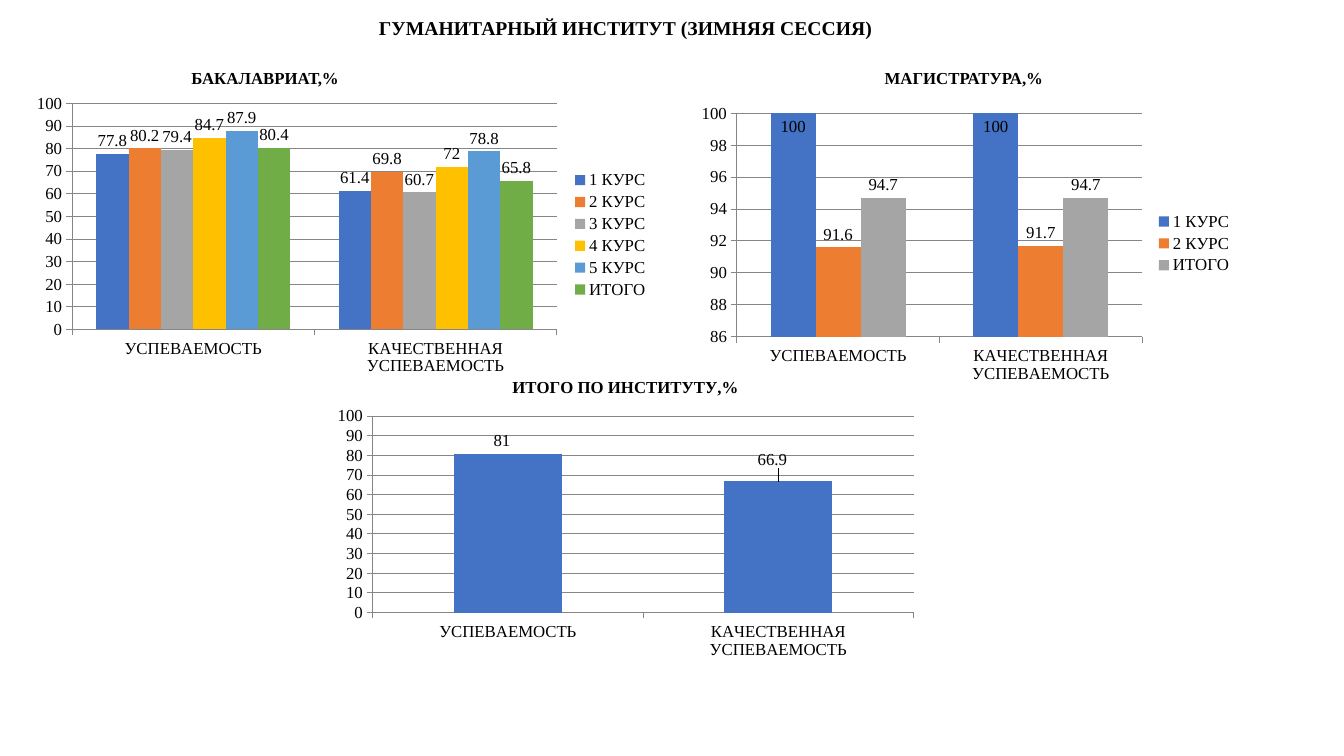
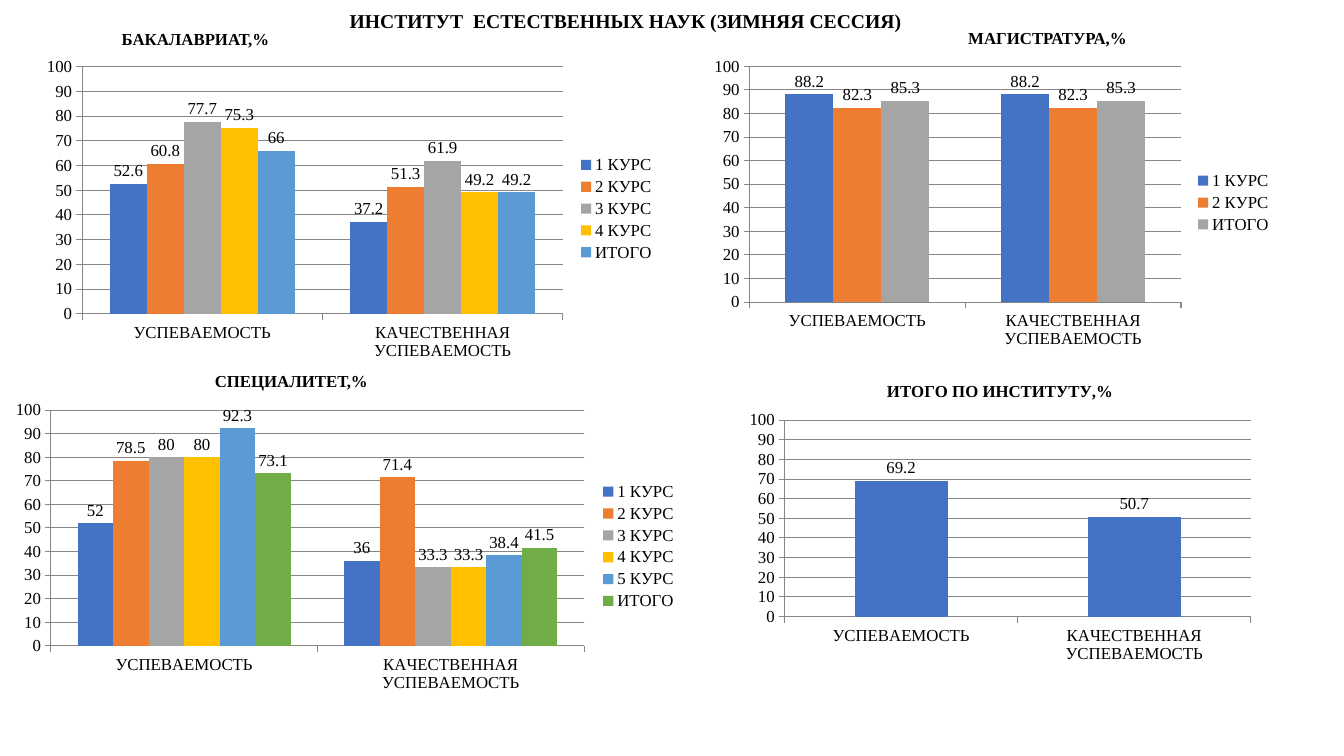
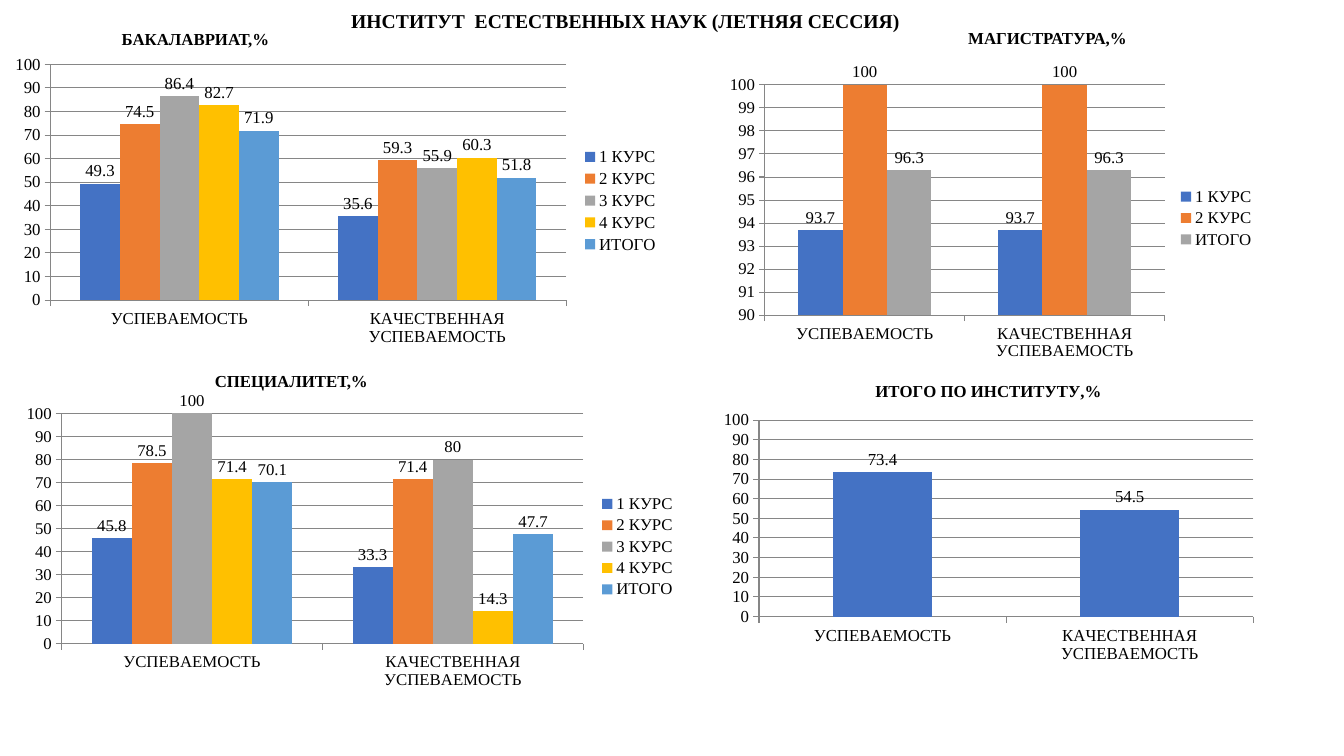
import pptx
import pptx.util
import pptx.chart.data
import pptx.dml.color
import pptx.enum.chart
import pptx.enum.text
import pptx.oxml
import pptx.oxml.ns

COLORS = {"text": "000000", "axis": "868686", "blue": "4472C4", "orange": "ED7D31",
          "grey": "A5A5A5", "yellow": "FFC000", "sky": "5B9BD5", "green": "70AD47"}
SERIES_COLORS = ["blue", "orange", "grey", "yellow", "sky", "green"]
FONT = "Times New Roman"
CATEGORIES = ["УСПЕВАЕМОСТЬ", "КАЧЕСТВЕННАЯ УСПЕВАЕМОСТЬ"]
BODY_FORMAT = {"name": FONT, "size": pptx.util.Pt(12), "bold": False}
HEADING_FORMAT = {**BODY_FORMAT, "bold": True}
TITLE_FORMAT = {**HEADING_FORMAT, "size": pptx.util.Pt(14)}
FRAME_FORMAT = {"word_wrap": True,
                "auto_size": pptx.enum.text.MSO_AUTO_SIZE.NONE,
                "vertical_anchor": pptx.enum.text.MSO_ANCHOR.TOP}
HEADING_SIZE = (2.84, 0.26)
LABEL_POSITION = pptx.enum.chart.XL_LABEL_POSITION


def rgb(name):
    return pptx.dml.color.RGBColor.from_string(COLORS[name])


def inches(box):
    return [pptx.util.Inches(length) for length in box]


def apply(target, values):
    for key, value in values.items():
        setattr(target, key, value)


def style_font(font, values):
    apply(font, values)
    font.color.rgb = rgb("text")


def fill_text(frame, text, values):
    apply(frame, FRAME_FORMAT)
    paragraph = frame.paragraphs[0]
    paragraph.text = text
    paragraph.alignment = pptx.enum.text.PP_ALIGN.CENTER
    style_font(paragraph.runs[0].font, values)


def add_title(slide, text, top):
    title = slide.shapes.title
    box = inches((2.52, top, 7.37, 0.4))
    apply(title, dict(zip(("left", "top", "width", "height"), box)))
    fill_text(title.text_frame, text, TITLE_FORMAT)


def add_heading(slide, text, left, top):
    heading = slide.shapes.add_textbox(*inches((left, top) + HEADING_SIZE))
    fill_text(heading.text_frame, text, HEADING_FORMAT)


def style_axes(chart, minimum, unit):
    apply(chart.value_axis, {"minimum_scale": minimum, "maximum_scale": 100,
                             "major_unit": unit, "has_major_gridlines": True})
    chart.category_axis.has_major_gridlines = False
    lines = [chart.value_axis.major_gridlines.format.line]
    for axis in (chart.category_axis, chart.value_axis):
        axis.major_tick_mark = pptx.enum.chart.XL_TICK_MARK.OUTSIDE
        axis.minor_tick_mark = pptx.enum.chart.XL_TICK_MARK.NONE
        style_font(axis.tick_labels.font, BODY_FORMAT)
        lines.append(axis.format.line)
    for line in lines:
        line.color.rgb = rgb("axis")
        line.width = pptx.util.Pt(0.75)


def add_columns(slide, box, series, title=None, minimum=0, unit=10):
    """Clustered columns; series is a list of (name, values)."""
    data = pptx.chart.data.CategoryChartData()
    data.categories = CATEGORIES
    for name, values in series:
        data.add_series(name, values)
    chart = slide.shapes.add_chart(
        pptx.enum.chart.XL_CHART_TYPE.COLUMN_CLUSTERED, *inches(box), data).chart
    style_font(chart.font, BODY_FORMAT)
    style_axes(chart, minimum, unit)

    # Title and legend
    chart.has_title = title is not None
    if title:
        fill = chart.chart_title.text_frame
        fill.text = title
        style_font(fill.paragraphs[0].runs[0].font, HEADING_FORMAT)
    chart.has_legend = len(series) > 1
    if chart.has_legend:
        chart.legend.position = pptx.enum.chart.XL_LEGEND_POSITION.RIGHT
        chart.legend.include_in_layout = False
        style_font(chart.legend.font, BODY_FORMAT)

    # Columns and value labels
    plot = chart.plots[0]
    apply(plot, {"gap_width": 150, "overlap": 0, "vary_by_categories": False})
    for column, color in zip(plot.series, SERIES_COLORS):
        column.invert_if_negative = False
        column.format.fill.solid()
        column.format.fill.fore_color.rgb = rgb(color)
        labels = column.data_labels
        apply(labels, {"show_value": True, "position": LABEL_POSITION.OUTSIDE_END})
        style_font(labels.font, BODY_FORMAT)
    return chart


def add_courses(slide, box, values, **scale):
    """One series for each course, the last one being the total."""
    names = [f"{number} КУРС" for number in range(1, len(values))] + ["ИТОГО"]
    return add_columns(slide, box, list(zip(names, values)), **scale)


def add_total(slide, box, values):
    return add_columns(slide, box, [("Series 1", values)], title="ИТОГО ПО ИНСТИТУТУ,%")


def shift_label(point, across, down):
    """Move a value label by fractions of the chart size."""
    point.data_label.position = LABEL_POSITION.OUTSIDE_END
    label = point.data_label._dLbl
    label.find(pptx.oxml.ns.qn("c:idx")).addnext(pptx.oxml.parse_xml(
        f'<c:layout {pptx.oxml.ns.nsdecls("c")}><c:manualLayout>'
        f'<c:x val="{across}"/><c:y val="{down}"/></c:manualLayout></c:layout>'))


def build_humanities(slide):
    add_title(slide, "ГУМАНИТАРНЫЙ ИНСТИТУТ (ЗИМНЯЯ СЕССИЯ)", 0.11)
    add_heading(slide, "БАКАЛАВРИАТ,%", 1.21, 0.62)
    add_heading(slide, "МАГИСТРАТУРА,%", 8.14, 0.62)
    add_courses(slide, (0.24, 0.88, 6.3, 2.9),
                [(77.8, 61.4), (80.2, 69.8), (79.4, 60.7),
                 (84.7, 72), (87.9, 78.8), (80.4, 65.8)])
    master = add_courses(slide, (6.85, 0.98, 5.48, 2.87),
                         [(100, 100), (91.6, 91.7), (94.7, 94.7)], minimum=86, unit=2)
    total = add_total(slide, (3.23, 3.59, 5.95, 3), (81, 66.9))
    # Labels set apart from the rest
    for index in range(len(CATEGORIES)):
        label = master.plots[0].series[0].points[index].data_label
        label.position = LABEL_POSITION.INSIDE_END
    shift_label(total.plots[0].series[0].points[0], -0.01, 0)
    shift_label(total.plots[0].series[0].points[1], -0.01, -0.03)


def build_sciences(slide, session, bachelor, master, specialist, total):
    """Four charts; each group is (box, values) with an optional scale."""
    add_title(slide, f"ИНСТИТУТ  ЕСТЕСТВЕННЫХ НАУК ({session} СЕССИЯ)", 0.04)
    add_heading(slide, "БАКАЛАВРИАТ,%", 0.52, 0.24)
    add_heading(slide, "МАГИСТРАТУРА,%", 8.97, 0.23)
    add_heading(slide, "СПЕЦИАЛИТЕТ,%", 1.47, 3.63)
    for group in (bachelor, master, specialist):
        add_courses(slide, **group)
    add_total(slide, **total)


def main():
    deck = pptx.Presentation()
    deck.slide_width, deck.slide_height = inches((13.33, 7.5))
    humanities, winter, summer = [
        deck.slides.add_slide(deck.slide_layouts[5]) for _ in range(3)]
    build_humanities(humanities)
    build_sciences(
        winter, "ЗИМНЯЯ",
        bachelor={"box": (0.34, 0.51, 6.26, 3.12),
                  "values": [(52.6, 37.2), (60.8, 51.3), (77.7, 61.9),
                             (75.3, 49.2), (66, 49.2)]},
        master={"box": (6.97, 0.51, 5.75, 3),
                "values": [(88.2, 88.2), (82.3, 82.3), (85.3, 85.3)]},
        specialist={"box": (0.02, 3.92, 6.8, 3),
                    "values": [(52, 36), (78.5, 71.4), (80, 33.3),
                               (80, 33.3), (92.3, 38.4), (73.1, 41.5)]},
        total={"box": (7.33, 3.63, 5.18, 3), "values": (69.2, 50.7)})
    build_sciences(
        summer, "ЛЕТНЯЯ",
        bachelor={"box": (0.02, 0.49, 6.62, 3),
                  "values": [(49.3, 35.6), (74.5, 59.3), (86.4, 55.9),
                             (82.7, 60.3), (71.9, 51.8)]},
        master={"box": (7.13, 0.63, 5.42, 3), "minimum": 90, "unit": 1,
                "values": [(93.7, 93.7), (100, 100), (96.3, 96.3)]},
        specialist={"box": (0.13, 3.89, 6.68, 3),
                    "values": [(45.8, 33.3), (78.5, 71.4), (100, 80),
                               (71.4, 14.3), (70.1, 47.7)]},
        total={"box": (7.07, 3.63, 5.47, 3), "values": (73.4, 54.5)})
    deck.save("out.pptx")


if __name__ == "__main__":
    main()
